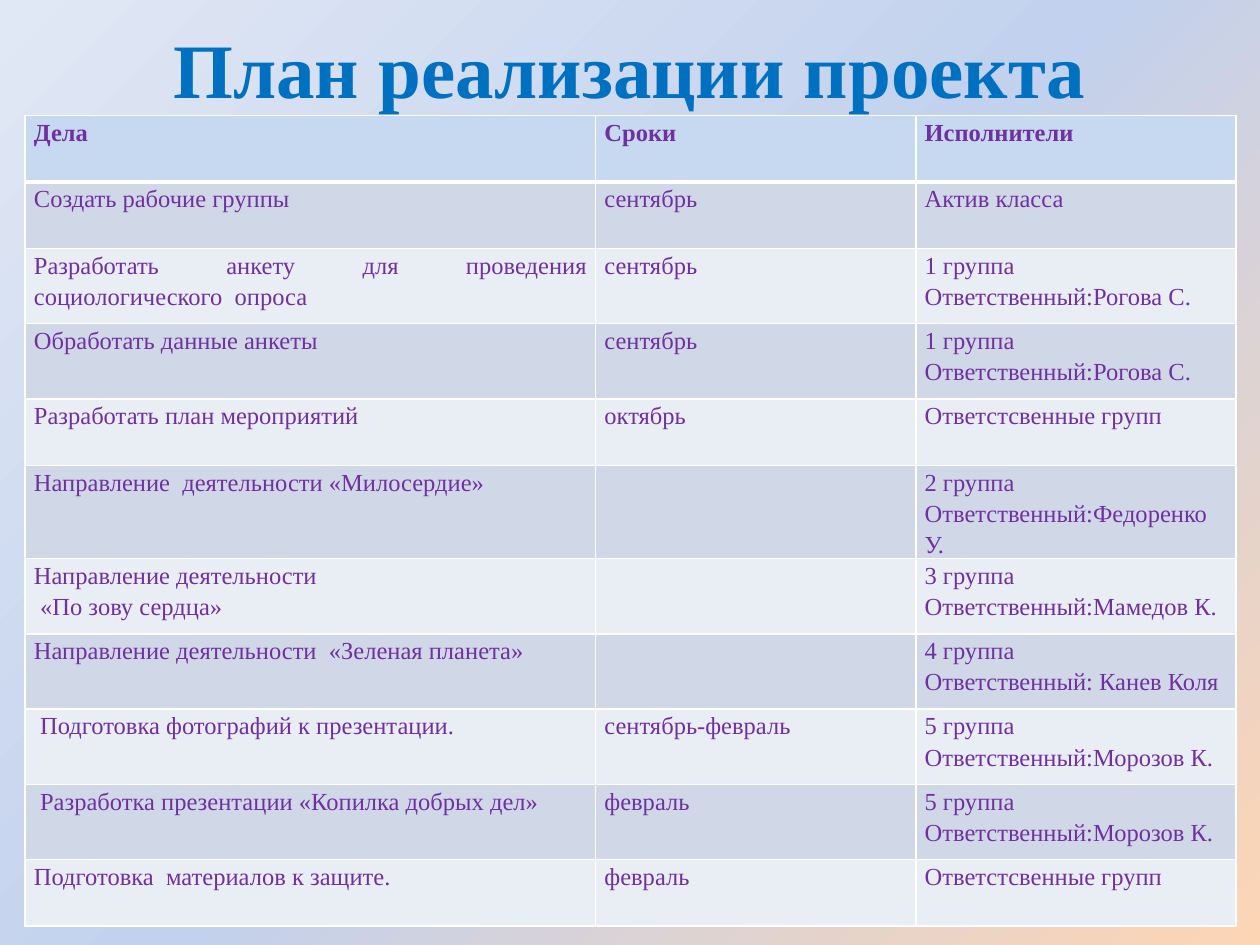
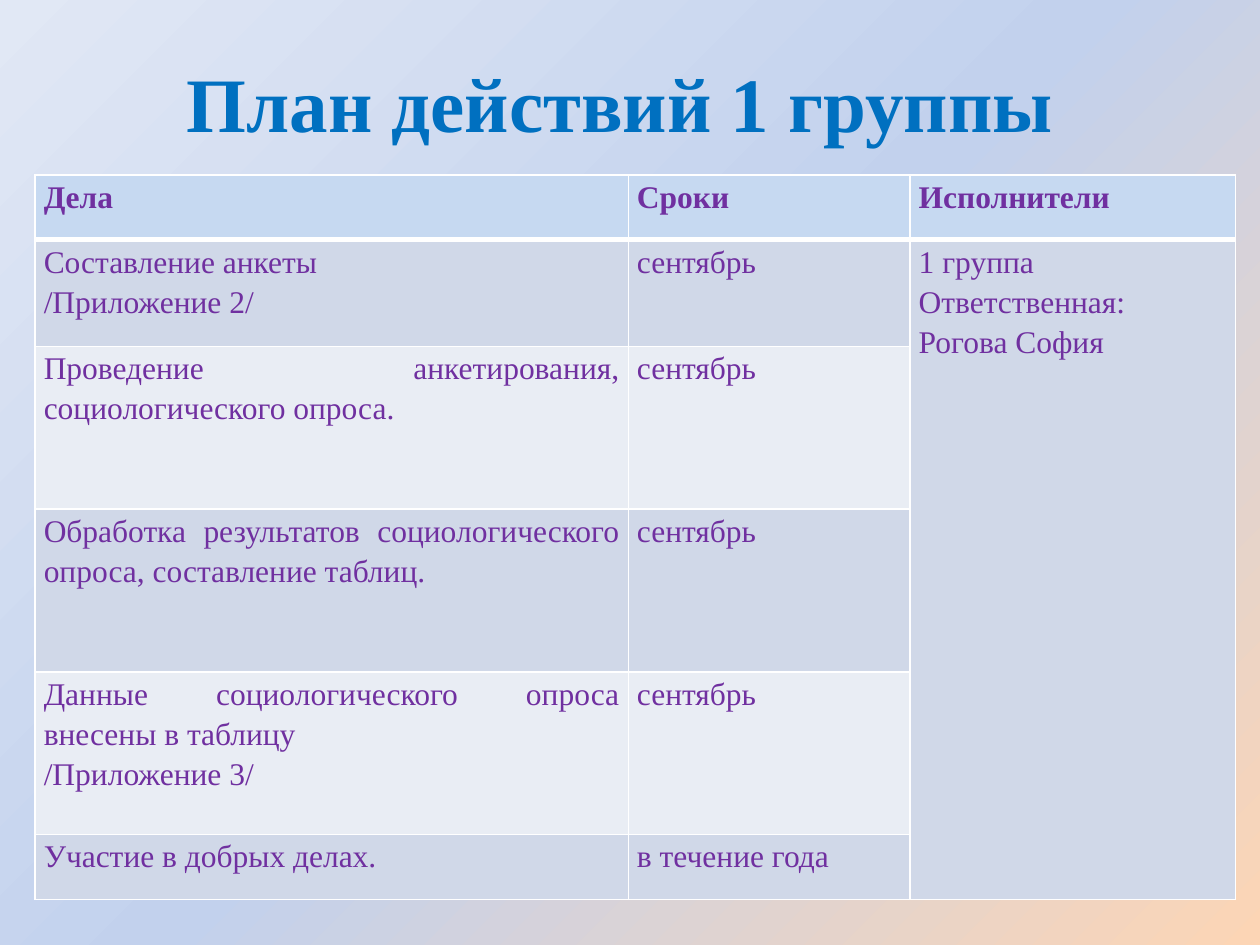
from copy import deepcopy

from lxml.etree import SubElement
from pptx import Presentation
from pptx.dml.color import RGBColor
from pptx.enum.text import MSO_ANCHOR, MSO_AUTO_SIZE, PP_ALIGN
from pptx.oxml.ns import qn
from pptx.util import Pt

COLORS = {
    "title": "0070C0", "text": "7030A0", "border": "FFFFFF", "header": "C6D9F1",
    "dark_band": "D0D8E8", "light_band": "E9EDF4",
}
BACKGROUND = {0: "FCD5B5", 0.5: "C2D1ED", 1: "E1E8F5"}
HEADER = ("Дела", "Сроки", "Исполнители")
SURVEY_TEAM = "1 группа\nОтветственный:Рогова С."
MEDIA_TEAM = "5 группа\nОтветственный:Морозов К."
LEADERS = "Ответстсвенные групп"

PROJECT_PLAN = [
    HEADER,
    ("Создать рабочие группы", "сентябрь", "Актив класса"),
    ("Разработать анкету для проведения социологического  опроса", "сентябрь", SURVEY_TEAM),
    ("Обработать данные анкеты", "сентябрь", SURVEY_TEAM),
    ("Разработать план мероприятий", "октябрь", LEADERS),
    ("Направление  деятельности «Милосердие»", "", "2 группа\nОтветственный:Федоренко У."),
    ("Направление деятельности\n «По зову сердца»", "", "3 группа\nОтветственный:Мамедов К."),
    ("Направление деятельности  «Зеленая планета»", "", "4 группа\nОтветственный: Канев Коля"),
    (" Подготовка фотографий к презентации.", "сентябрь-февраль", MEDIA_TEAM),
    (" Разработка презентации «Копилка добрых дел»", "февраль", MEDIA_TEAM),
    ("Подготовка  материалов к защите.", "февраль", LEADERS),
]
GROUP_PLAN = [
    HEADER,
    ("Составление анкеты\n/Приложение 2/", "сентябрь",
     "1 группа\nОтветственная:\nРогова София"),
    ("Проведение анкетирования, социологического опроса.", "сентябрь", ""),
    ("Обработка результатов социологического опроса, составление таблиц.", "сентябрь", ""),
    ("Данные социологического опроса внесены в таблицу\n/Приложение 3/", "сентябрь", ""),
    ("Участие в добрых делах.", "в течение года", ""),
]


class Deck:
    """Hold the shared style and the current slide."""

    def __init__(self):
        self.prs = Presentation()
        self.prs.slide_width, self.prs.slide_height = Pt(720), Pt(540)
        self.s = None
        self.background()

    def background(self):
        master = self.prs.slide_master
        fill = master.background.fill
        fill.gradient()
        fill.gradient_angle = 135
        stops = master.element.find(".//" + qn("a:gsLst"))
        stops.append(deepcopy(stops[0]))
        for stop, (position, color) in zip(fill.gradient_stops, BACKGROUND.items()):
            stop.position = position
            stop.color.rgb = RGBColor.from_string(color)

    def slide(self):
        self.s = self.prs.slides.add_slide(self.prs.slide_layouts[5])

    def format_text(self, tf, color, size, bold, **paragraph):
        for p in tf.paragraphs:
            for name, value in paragraph.items():
                setattr(p, name, value)
            for r in p.runs:
                font = {"name": "Times New Roman", "size": Pt(size), "bold": bold}
                for name, value in font.items():
                    setattr(r.font, name, value)
                r.font.color.rgb = RGBColor.from_string(COLORS[color])

    def title(self, text, top, height):
        sp = self.s.shapes.title
        box = {"left": Pt(36), "top": Pt(top), "width": Pt(648), "height": Pt(height)}
        for name, value in box.items():
            setattr(sp, name, value)
        tf = sp.text_frame
        tf.text = text
        tf.auto_size = MSO_AUTO_SIZE.NONE
        tf.vertical_anchor = MSO_ANCHOR.MIDDLE
        self.format_text(tf, "title", 44, True, alignment=PP_ALIGN.CENTER)

    def borders(self, cell, row):
        tc_pr = cell._tc.get_or_add_tcPr()
        widths = {"L": 1, "R": 1, "T": 3 if row == 1 else 1, "B": 3 if row == 0 else 1}
        for side, width in widths.items():
            line = SubElement(tc_pr, qn(f"a:ln{side}"), w=str(Pt(width)))
            fill = SubElement(line, qn("a:solidFill"))
            SubElement(fill, qn("a:srgbClr"), val=COLORS["border"])

    def cell(self, cell, row, text, size):
        self.borders(cell, row)
        band = "header" if row == 0 else ("light_band", "dark_band")[row % 2]
        cell.fill.solid()
        cell.fill.fore_color.rgb = RGBColor.from_string(COLORS[band])
        margins = {"margin_left": 5, "margin_right": 5, "margin_top": 0, "margin_bottom": 0}
        for name, value in margins.items():
            setattr(cell, name, Pt(value))
        cell.text_frame.text = text
        self.format_text(cell.text_frame, "text", size, row == 0,
                         alignment=PP_ALIGN.JUSTIFY, line_spacing=1.15)

    def table(self, data, left, top, widths, heights, size):
        table = self.s.shapes.add_table(
            len(data), len(widths), Pt(left), Pt(top), Pt(sum(widths)), Pt(sum(heights))).table
        for column, width in zip(table.columns, widths):
            column.width = Pt(width)
        for row, height in zip(table.rows, heights):
            row.height = Pt(height)
        for i, texts in enumerate(data):
            for j, text in enumerate(texts):
                self.cell(table.cell(i, j), i, text, size)
        return table


def main():
    deck = Deck()

    deck.slide()
    deck.title("План реализации проекта", 0, 77)
    heights = [43 if "\n" in team or len(task) > 50 else 38 for task, _, team in PROJECT_PLAN]
    deck.table(PROJECT_PLAN, 14.4, 66, [326, 183, 183], heights, 14)

    deck.slide()
    deck.title("План действий 1 группы ", 21.6, 72.7)
    table = deck.table(GROUP_PLAN, 20, 100, [339, 161, 186], [37, 61, 93, 93, 93, 37], 18)
    table.cell(1, 2).merge(table.cell(5, 2))

    deck.prs.save("out.pptx")


if __name__ == "__main__":
    main()
